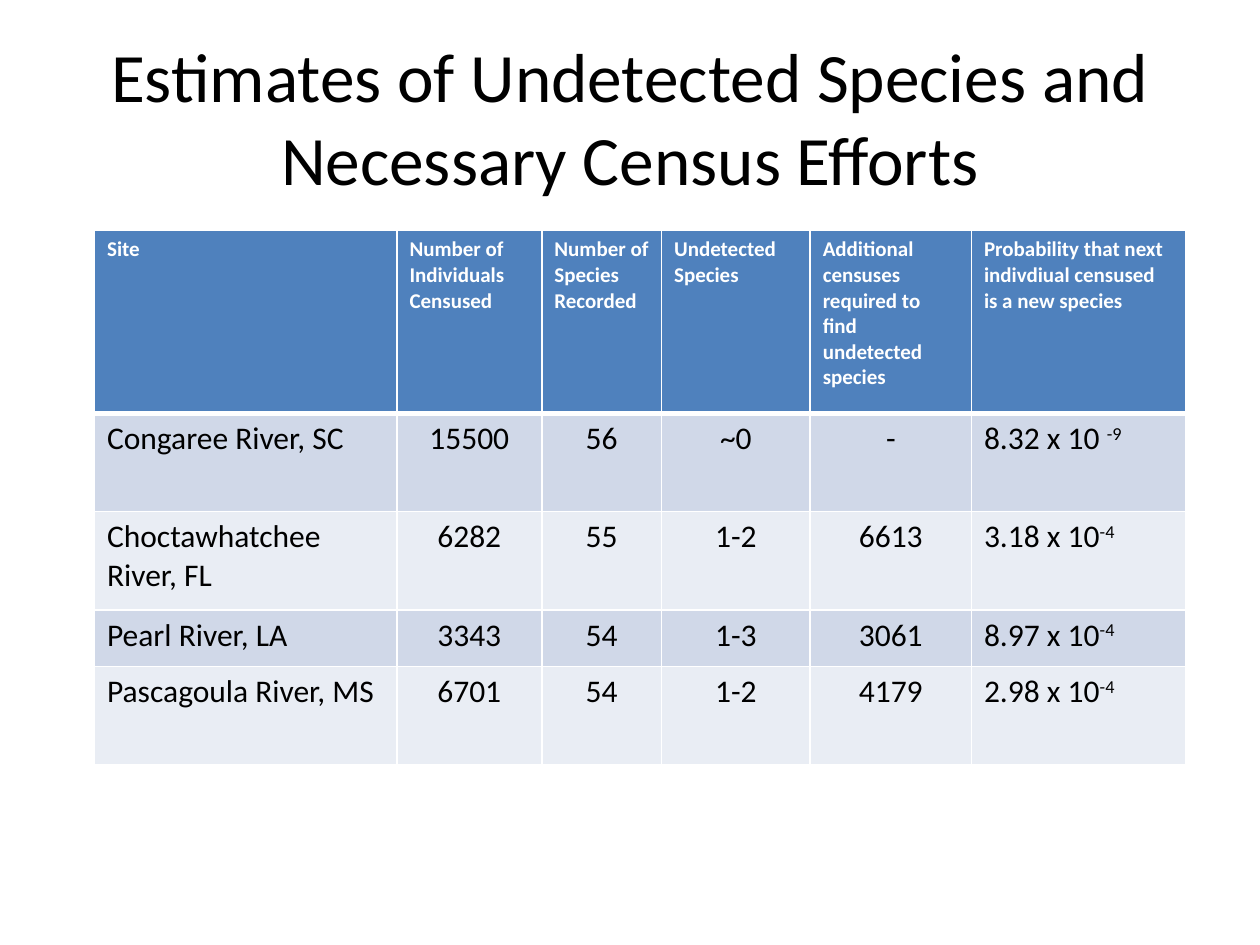
"""Build a slide with a table of undetected species and census efforts."""
from lxml import etree
from pptx import Presentation
from pptx import util as u
from pptx.dml.color import RGBColor
from pptx.enum import text
from pptx.oxml import ns

COLORS = {"header": "4F81BD", "odd": "D0D8E8", "even": "E9EDF4", "white": "FFFFFF", "black": "000000"}
FONT = "Calibri"
HEADERS = [
    "Site",
    "Number of Individuals Censused",
    "Number of Species Recorded",
    "Undetected Species",
    "Additional censuses required to find undetected species",
    "Probability that next indivdiual censused is a new species",
]
SITES = [
    ["Congaree River, SC", "15500", "56", "~0", "-", ("8.32 x 10 ", "-9")],
    ["Choctawhatchee River, FL", "6282", "55", "1-2", "6613", ("3.18 x 10", "-4")],
    ["Pearl River, LA", "3343", "54", "1-3", "3061", ("8.97 x 10", "-4")],
    ["Pascagoula River, MS", "6701", "54", "1-2", "4179", ("2.98 x 10", "-4")],
]
COLUMN_WIDTHS = [2.4, 1.15, 0.95, 1.18, 1.28, 1.7]
ROW_HEIGHTS = [1.45, 0.78, 0.78, 0.45, 0.78]


def add_run(paragraph, content, size, color, bold=False):
    run = paragraph.add_run()
    run.text = content
    run.font.name = FONT
    run.font.size = u.Pt(size)
    run.font.bold = bold
    run.font.color.rgb = RGBColor.from_string(COLORS[color])
    return run


def add_borders(cell, bottom_width):
    properties = cell._tc.get_or_add_tcPr()
    for side, width in (("L", 1), ("R", 1), ("T", 1), ("B", bottom_width)):
        line = etree.SubElement(properties, ns.qn(f"a:ln{side}"), w=str(u.Pt(width)))
        fill = etree.SubElement(line, ns.qn("a:solidFill"))
        etree.SubElement(fill, ns.qn("a:srgbClr"), val=COLORS["white"])


presentation = Presentation()
presentation.slide_width = u.Inches(10)
presentation.slide_height = u.Inches(7.5)
slide = presentation.slides.add_slide(presentation.slide_layouts[5])

title = slide.shapes.title
title.left, title.top = u.Inches(0.5), u.Inches(0.3)
title.width, title.height = u.Inches(9), u.Inches(1.25)
title.text_frame.vertical_anchor = text.MSO_ANCHOR.MIDDLE
title_paragraph = title.text_frame.paragraphs[0]
title_paragraph.alignment = text.PP_ALIGN.CENTER
add_run(title_paragraph, "Estimates of Undetected Species and Necessary Census Efforts", 39.6, "black")

table = slide.shapes.add_table(
    len(ROW_HEIGHTS), len(COLUMN_WIDTHS),
    u.Inches(0.75), u.Inches(1.83), u.Inches(8.67), u.Inches(4.25),
).table
for column, width in zip(table.columns, COLUMN_WIDTHS):
    column.width = u.Inches(width)
for row, height in zip(table.rows, ROW_HEIGHTS):
    row.height = u.Inches(height)

for row_index, values in enumerate([HEADERS] + SITES):
    is_header = row_index == 0
    fill_name = "header" if is_header else "odd" if row_index % 2 else "even"
    for column_index, value in enumerate(values):
        cell = table.cell(row_index, column_index)
        add_borders(cell, 3 if is_header else 1)
        cell.fill.solid()
        cell.fill.fore_color.rgb = RGBColor.from_string(COLORS[fill_name])
        paragraph = cell.text_frame.paragraphs[0]
        if is_header:
            add_run(paragraph, value, 12, "white", bold=True)
        elif isinstance(value, tuple):
            base, exponent = value
            add_run(paragraph, base, 18, "black")
            superscript = add_run(paragraph, exponent, 18, "black")
            superscript.font._element.set("baseline", "30000")
        else:
            add_run(paragraph, value, 18, "black")
            if column_index > 0:
                paragraph.alignment = text.PP_ALIGN.CENTER

presentation.save("out.pptx")
